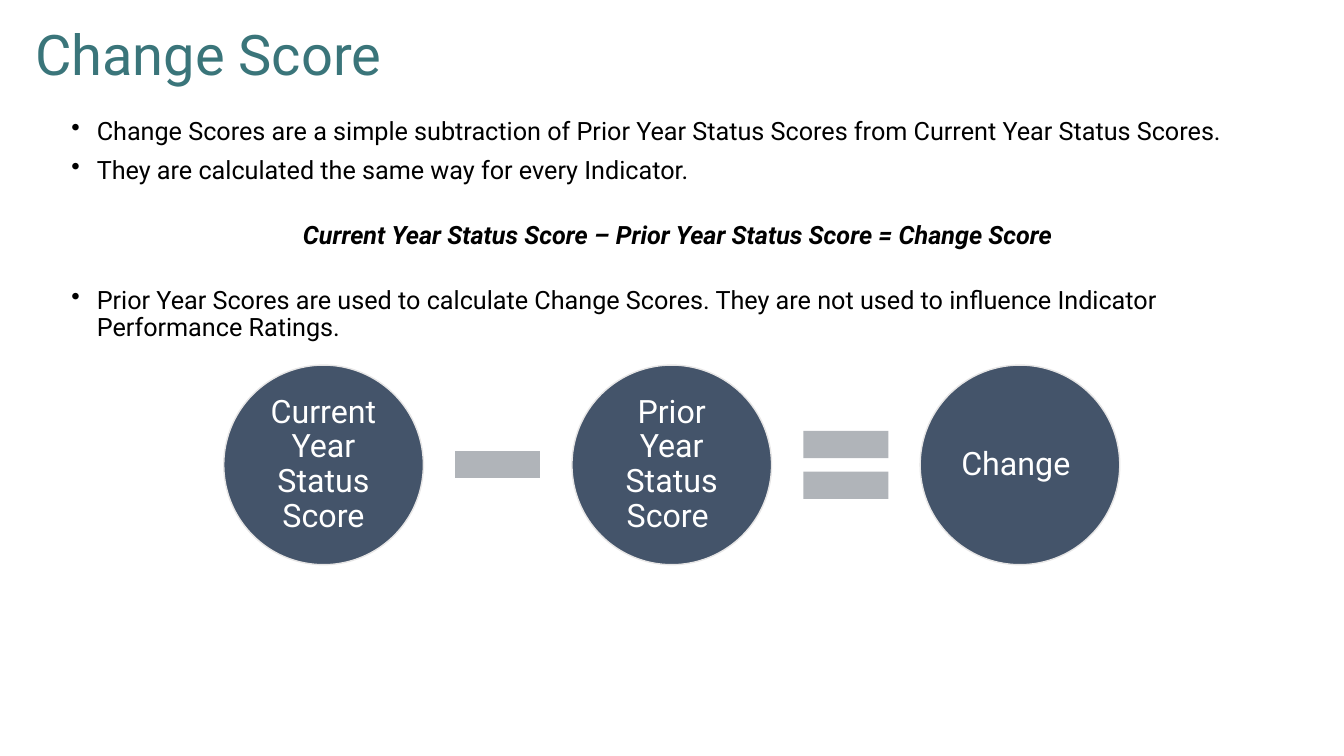
"""Build the Change Score slide."""
from lxml import etree
from pptx import Presentation
from pptx.dml.color import RGBColor
from pptx.enum.shapes import MSO_SHAPE
from pptx.enum.text import MSO_ANCHOR, PP_ALIGN
from pptx.oxml.ns import qn
from pptx.util import Cm, Pt

ELLIPSE, MINUS, EQUAL = MSO_SHAPE.OVAL, MSO_SHAPE.MATH_MINUS, MSO_SHAPE.MATH_EQUAL
MIDDLE, CENTER = MSO_ANCHOR.MIDDLE, PP_ALIGN.CENTER
FONT = "Roboto"
COLORS = {
    "title": "3A757A",
    "body": "000000",
    "circle": "44546A",
    "circle_edge": "E7E6E6",
    "circle_text": "FFFFFF",
    "operator": "B0B4B9",
}
INDENT = Cm(0.64)
STATEMENTS = [
    "Change Scores are a simple subtraction of Prior Year Status Scores from Current Year Status Scores.",
    "They are calculated the same way for every Indicator.",
    "Current Year Status Score – Prior Year Status Score = Change Score",
    "Prior Year Scores are used to calculate Change Scores. They are not used to influence Indicator "
    "Performance Ratings.",
]
FORMULA = STATEMENTS[2]
TERMS = ["Current Year Status Score", "Prior Year Status Score ", "Change "]
OPERATORS = [MINUS, EQUAL]


def color(key):
    return RGBColor.from_string(COLORS[key])


def format_paragraph(paragraph, size, color_key):
    paragraph.line_spacing = 0.9
    for run in paragraph.runs:
        run.font.name = FONT
        run.font.size = Pt(size)
        run.font.color.rgb = color(color_key)


def add_bullet(paragraph):
    properties = paragraph._p.get_or_add_pPr()
    properties.set("marL", str(INDENT))
    properties.set("indent", str(-INDENT))
    etree.SubElement(properties, qn("a:buChar")).set("char", "•")


def add_title(slide, left, top, width, height):
    frame = slide.shapes.add_textbox(left, top, width, height).text_frame
    frame.word_wrap = True
    frame.vertical_anchor = MIDDLE
    frame.text = "Change Score"
    heading = frame.paragraphs[0]
    heading._p.get_or_add_pPr().set("marL", str(INDENT))
    format_paragraph(heading, 40, "title")


def add_statements(slide, left, top, width, height):
    frame = slide.shapes.add_textbox(left, top, width, height).text_frame
    frame.word_wrap = True
    frame.text = "\n".join(STATEMENTS)
    for index, statement in enumerate(frame.paragraphs):
        if statement.text == FORMULA:
            statement.alignment = CENTER
            statement.space_after = Pt(19)
            statement.runs[0].font.bold = True
            statement.runs[0].font.italic = True
        else:
            add_bullet(statement)
        if index:
            statement.space_before = Pt(27 if statement.text == FORMULA else 8)
        format_paragraph(statement, 18, "body")


def add_filled(slide, kind, left, top, size, color_key):
    shape = slide.shapes.add_shape(kind, left, top, size, size)
    shape.shadow.inherit = False
    shape.fill.solid()
    shape.fill.fore_color.rgb = color(color_key)
    shape.line.fill.background()
    return shape


def add_term(slide, term, left, top, diameter):
    circle = add_filled(slide, ELLIPSE, left, top, diameter, "circle")
    circle.line.color.rgb = color("circle_edge")
    circle.line.width = Pt(1)
    frame = circle.text_frame
    frame.word_wrap = True
    frame.vertical_anchor = MIDDLE
    frame.margin_left = frame.margin_right = Cm(0.08)
    frame.margin_top = frame.margin_bottom = Cm(0.08)
    frame.text = term
    frame.paragraphs[0].alignment = CENTER
    format_paragraph(frame.paragraphs[0], 23, "circle_text")


def add_equation(slide, left, top, width, diameter):
    pitch = (width - diameter) // (len(TERMS) - 1)
    operator_size = Cm(2.92)
    gap = (pitch - diameter - operator_size) // 2
    for index, term in enumerate(TERMS):
        add_term(slide, term, left + index * pitch, top, diameter)
    for index, operator in enumerate(OPERATORS):
        add_filled(slide, operator, left + index * pitch + diameter + gap,
                   top + (diameter - operator_size) // 2, operator_size, "operator")


def main():
    presentation = Presentation()
    presentation.slide_width = Cm(33.87)
    presentation.slide_height = Cm(19.05)
    slide = presentation.slides.add_slide(presentation.slide_layouts[6])
    add_title(slide, Cm(0), Cm(0), Cm(29.34), Cm(2.87))
    add_statements(slide, Cm(1.55), Cm(2.87), Cm(31.06), Cm(1.4))
    add_equation(slide, Cm(5.64), Cm(9.2), Cm(22.58), Cm(5.03))
    presentation.save("out.pptx")


if __name__ == "__main__":
    main()
